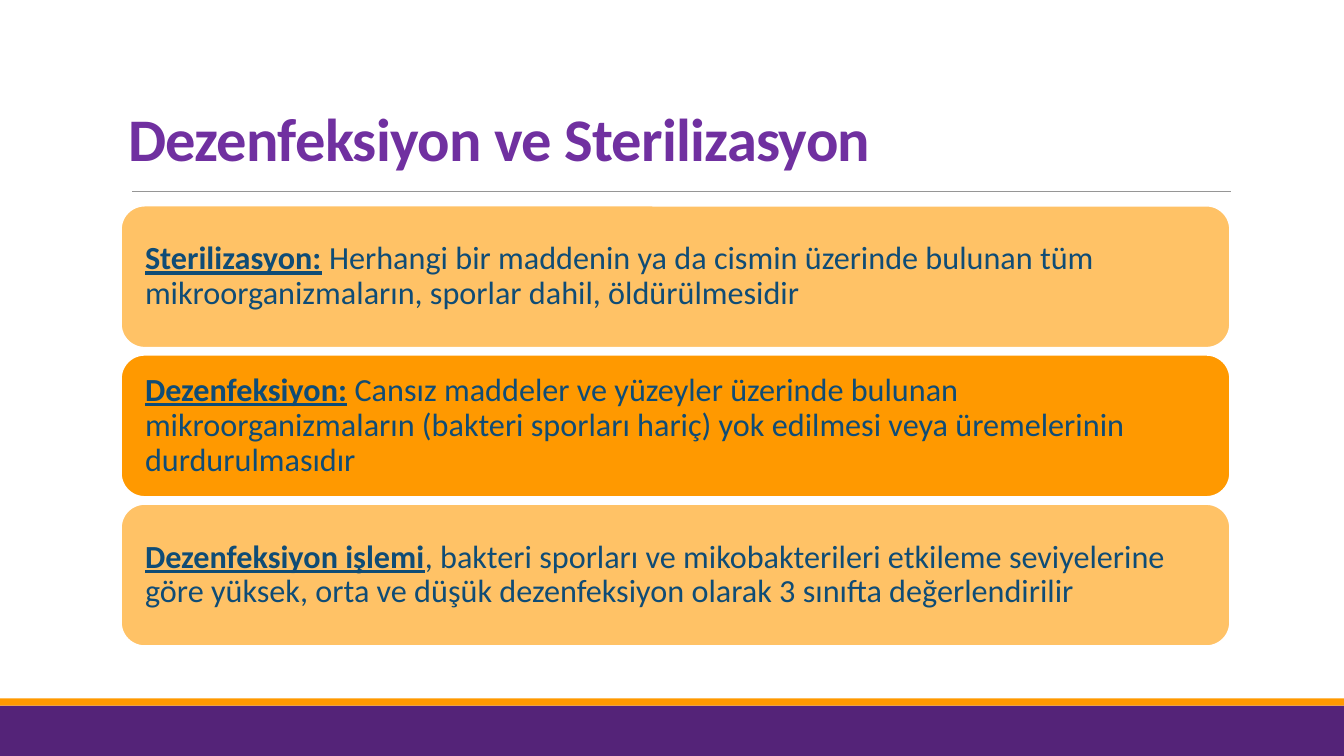
from pptx import Presentation
from pptx.dml.color import RGBColor as RGB
from pptx.enum.shapes import MSO_CONNECTOR as Conn, MSO_SHAPE as Form
from pptx.enum.text import MSO_ANCHOR as Anchor, MSO_AUTO_SIZE as Fit, PP_ALIGN as Align
from pptx.oxml.ns import qn
from pptx.util import Inches, Pt

COLORS = {
    "violet": "542378",
    "title": "7030A0",
    "orange": "FF9900",
    "light": "FFC266",
    "white": "FFFFFF",
    "ink": "0F4C76",
    "rule": "969696",
}

CARDS = [
    ("Sterilizasyon:",
     " Herhangi bir maddenin ya da cismin üzerinde bulunan tüm "
     "mikroorganizmaların, sporlar dahil, öldürülmesidir", "light"),
    ("Dezenfeksiyon:",
     " Cansız maddeler ve yüzeyler üzerinde bulunan mikroorganizmaların "
     "(bakteri sporları hariç) yok edilmesi veya üremelerinin durdurulmasıdır",
     "orange"),
    ("Dezenfeksiyon işlemi",
     ", bakteri sporları ve mikobakterileri etkileme seviyelerine göre yüksek, "
     "orta ve düşük dezenfeksiyon olarak 3 sınıfta değerlendirilir", "light"),
]


def color(name):
    return RGB.from_string(COLORS[name])


def add_text(para, text, size=23, tint="ink", bold=False, under=False, track=0):
    run = para.add_run()
    run.text = text
    font = run.font
    font.name = "Calibri"
    font.size = Pt(size)
    font.bold = bold
    font.underline = under
    font.color.rgb = color(tint)
    if track:
        font._element.set("spc", str(round(track * 100)))


def set_frame(frame, anchor, side, edge, space):
    frame.word_wrap = True
    frame.auto_size = Fit.NONE
    frame.vertical_anchor = anchor
    frame.margin_left = frame.margin_right = Inches(side)
    frame.margin_top = frame.margin_bottom = Inches(edge)
    para = frame.paragraphs[0]
    para.alignment = Align.LEFT
    para.line_spacing = space
    return para


def add_box(slide, form, left, top, width, height, fill, line=None):
    box = slide.shapes.add_shape(
        form, Inches(left), Inches(top), Inches(width), Inches(height))
    box.shadow.inherit = False
    box.fill.solid()
    box.fill.fore_color.rgb = color(fill)
    if line:
        box.line.color.rgb = color(line)
        box.line.width = Pt(1.25)
    else:
        box.line.fill.background()
    return box


def add_rule(slide, left, right, top):
    rule = slide.shapes.add_connector(
        Conn.STRAIGHT, Inches(left), Inches(top), Inches(right), Inches(top))
    rule.line.color.rgb = color("rule")
    rule.line.width = Pt(0.5)
    props = rule._element.spPr
    props.append(props.makeelement(qn("a:effectLst"), {}))


def set_title(slide, text):
    title = slide.shapes.title
    title.left, title.top = Inches(1.17), Inches(0.35)
    title.width, title.height = Inches(9.4), Inches(1.43)
    para = set_frame(title.text_frame, Anchor.BOTTOM, 0.1, 0.05, 0.85)
    add_text(para, text, size=43.2, tint="title", bold=True, track=-0.5)


def add_card(slide, top, term, text, fill):
    card = add_box(slide, Form.ROUNDED_RECTANGLE, 1.2, top, 11, 1.41, fill, "white")
    para = set_frame(card.text_frame, Anchor.MIDDLE, 0.17, 0.1, 0.9)
    add_text(para, term, bold=True, under=True)
    add_text(para, text)


def main():
    deck = Presentation()
    deck.slide_width, deck.slide_height = Inches(13.33), Inches(7.5)
    slide = deck.slides.add_slide(deck.slide_layouts[5])
    add_box(slide, Form.RECTANGLE, 0, 7, 13.33, 0.5, "violet")
    add_box(slide, Form.RECTANGLE, 0, 6.93, 13.33, 0.07, "orange")
    add_rule(slide, 1.31, 12.21, 1.9)
    set_title(slide, "Dezenfeksiyon ve Sterilizasyon")
    for row, (term, text, fill) in enumerate(CARDS):
        add_card(slide, 2.04 + row * 1.48, term, text, fill)
    deck.save("out.pptx")


if __name__ == "__main__":
    main()
